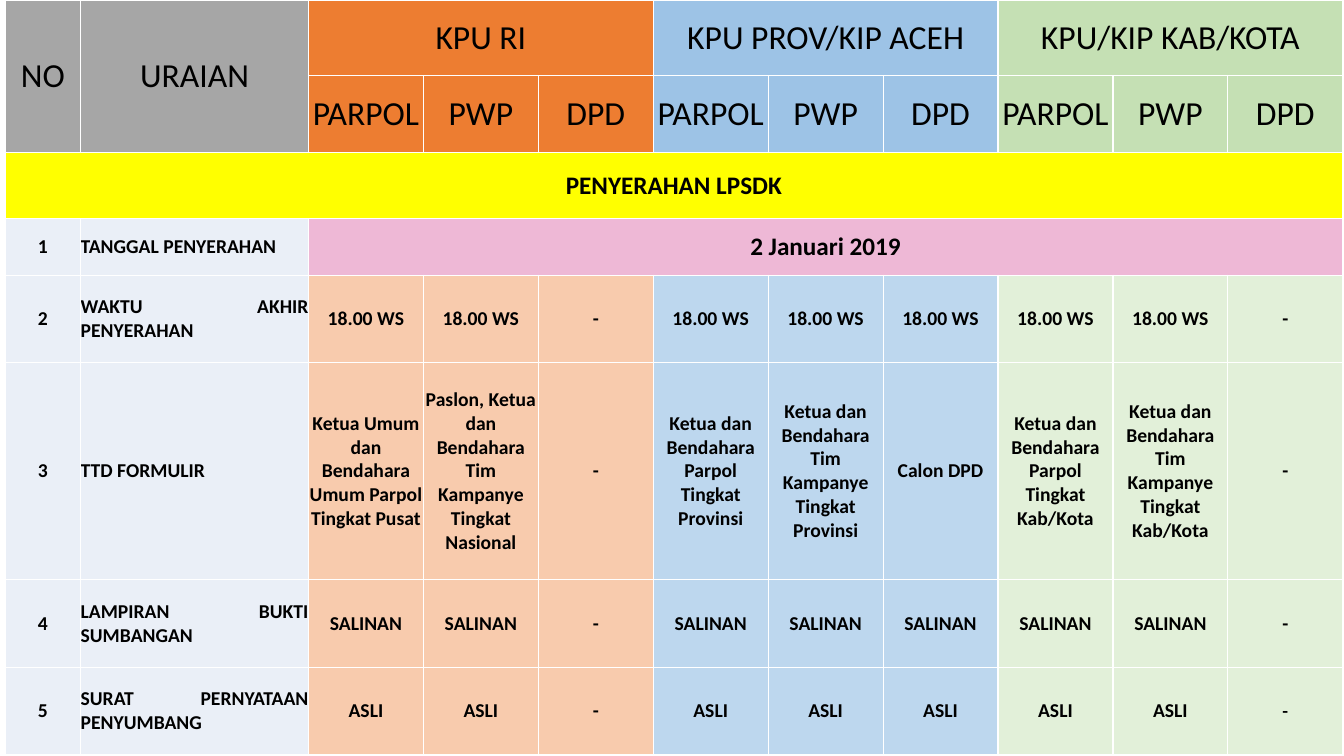
from dataclasses import dataclass

from lxml.etree import SubElement
from pptx import Presentation
from pptx.dml.color import RGBColor
from pptx.enum.text import MSO_ANCHOR, PP_ALIGN
from pptx.oxml.ns import qn
from pptx.table import Table, _Cell
from pptx.util import Inches, Pt

HUES = {
    "text": "000000", "edge": "FFFFFF", "head": "A6A6A6",
    "band": "FFFF00", "date": "EEB8D6", "label": "EAEFF7",
}
COLS = [0.75, 2.26] + [1.14] * 9
ROWS = [0.75, 0.76, 0.66, 0.56, 0.87, 2.15, 0.87, 0.87]
LEFT = 0.05
ROLES = ["PARPOL", "PWP", "DPD"]


@dataclass
class Group:
    name: str
    dark: str
    light: str


@dataclass
class Item:
    label: str
    texts: list[str]


@dataclass
class Style:
    size: int = 14
    bold: bool = True
    align: PP_ALIGN = PP_ALIGN.CENTER
    font: str = "Calibri"


GROUPS = [
    Group("KPU RI", "ED7D31", "F8CBAD"),
    Group("KPU PROV/KIP ACEH", "9DC3E6", "BDD7EE"),
    Group("KPU/KIP KAB/KOTA", "C5E0B4", "E2F0D9"),
]


def spread(word: str) -> list[str]:
    """Give the word to every role but the DPD of the first and last group."""
    return [word, word, "-", word, word, word, word, word, "-"]


ITEMS = [
    Item("WAKTU AKHIR PENYERAHAN", spread("18.00 WS")),
    Item("TTD FORMULIR", [
        "Ketua Umum dan Bendahara Umum Parpol Tingkat Pusat",
        "Paslon, Ketua dan Bendahara Tim Kampanye Tingkat Nasional",
        "-",
        "Ketua dan Bendahara Parpol Tingkat Provinsi",
        "Ketua dan Bendahara Tim Kampanye Tingkat Provinsi",
        "Calon DPD",
        "Ketua dan Bendahara Parpol Tingkat Kab/Kota",
        "Ketua dan Bendahara Tim Kampanye Tingkat Kab/Kota",
        "-",
    ]),
    Item("LAMPIRAN BUKTI SUMBANGAN", spread("SALINAN")),
    Item("SURAT PERNYATAAN PENYUMBANG", spread("ASLI")),
]

HEAD = Style(24, bold=False)
TITLE = Style(18)
BODY = Style()
LABEL = Style(align=PP_ALIGN.JUSTIFY)
SLAB = Style(12, font="Roboto Slab")


def edge(cell: _Cell) -> None:
    """Draw a thin line on the four sides of a cell."""
    props = cell._tc.get_or_add_tcPr()
    for spot, side in enumerate(("a:lnL", "a:lnR", "a:lnT", "a:lnB")):
        line = SubElement(props, qn(side), w=str(Pt(1)))
        fill = SubElement(line, qn("a:solidFill"))
        SubElement(fill, qn("a:srgbClr"), val=HUES["edge"])
        props.insert(spot, line)


def put(table: Table, row: int, col: int, text: str, hue: str, style: Style,
        high: int = 1, wide: int = 1) -> None:
    """Fill one cell, or a merged block of cells, with text and colour."""
    cell = table.cell(row, col)
    if high > 1 or wide > 1:
        cell.merge(table.cell(row + high - 1, col + wide - 1))
    cell.fill.solid()
    cell.fill.fore_color.rgb = RGBColor.from_string(hue)
    cell.vertical_anchor = MSO_ANCHOR.MIDDLE
    cell.margin_left = cell.margin_right = 0
    cell.margin_top = cell.margin_bottom = 0
    cell.text_frame.text = text
    para = cell.text_frame.paragraphs[0]
    para.alignment = style.align
    font = para.runs[0].font
    font.name, font.size, font.bold = style.font, Pt(style.size), style.bold
    font.color.rgb = RGBColor.from_string(HUES["text"])


def label(table: Table, num: int, text: str) -> None:
    """Write the number and name that open a row."""
    put(table, num + 2, 0, str(num), HUES["label"], BODY)
    put(table, num + 2, 1, text, HUES["label"], LABEL)


def main() -> None:
    deck = Presentation()
    deck.slide_width, deck.slide_height = Inches(13.33), Inches(7.5)
    slide = deck.slides.add_slide(deck.slide_layouts[6])

    # Grid
    table = slide.shapes.add_table(
        len(ROWS), len(COLS), Inches(LEFT), 0,
        Inches(sum(COLS)), Inches(sum(ROWS))).table
    for col, width in zip(table.columns, COLS):
        col.width = Inches(width)
    for row, height in zip(table.rows, ROWS):
        row.height = Inches(height)

    # Headings
    for col, text in enumerate(("NO", "URAIAN")):
        put(table, 0, col, text, HUES["head"], HEAD, high=2)
    for num, group in enumerate(GROUPS):
        start = 2 + num * len(ROLES)
        put(table, 0, start, group.name, group.dark, HEAD, wide=len(ROLES))
        for step, role in enumerate(ROLES):
            put(table, 1, start + step, role, group.dark, HEAD)

    # Title band and date
    put(table, 2, 0, "PENYERAHAN LPSDK", HUES["band"], TITLE, wide=len(COLS))
    label(table, 1, "TANGGAL PENYERAHAN ")
    put(table, 3, 2, "2 Januari 2019", HUES["date"], TITLE, wide=9)

    # Items
    for num, item in enumerate(ITEMS, 2):
        label(table, num, item.label)
        for pos, text in enumerate(item.texts):
            last = item is ITEMS[-1] and pos == len(item.texts) - 1
            hue = GROUPS[pos // len(ROLES)].light
            put(table, num + 2, pos + 2, text, hue, SLAB if last else BODY)

    # Borders
    for cell in table.iter_cells():
        edge(cell)

    deck.save("out.pptx")


if __name__ == "__main__":
    main()
